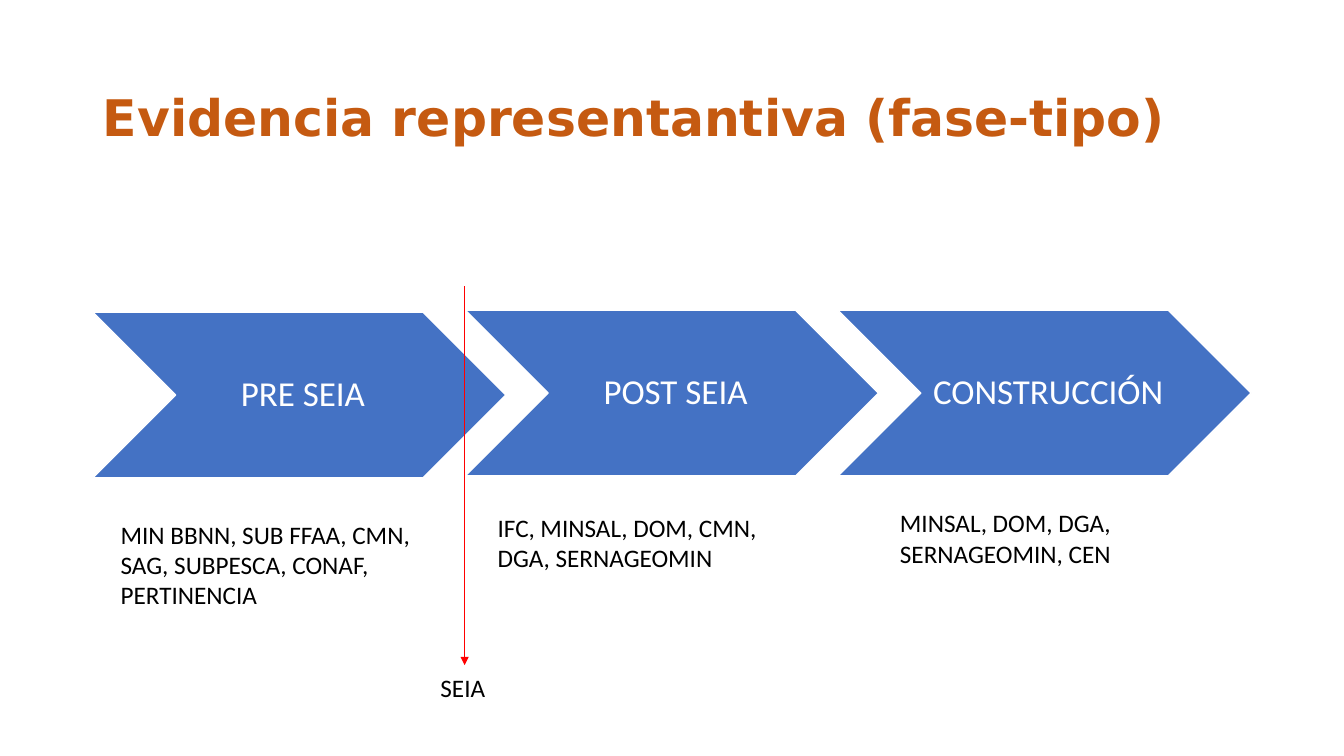
from lxml import etree
from pptx import Presentation
from pptx.dml.color import RGBColor
from pptx.enum.shapes import MSO_CONNECTOR, MSO_SHAPE
from pptx.enum.text import MSO_ANCHOR, MSO_AUTO_SIZE, PP_ALIGN
from pptx.oxml.ns import qn
from pptx.util import Cm, Pt

CHEVRON = MSO_SHAPE.CHEVRON
STRAIGHT = MSO_CONNECTOR.STRAIGHT
MIDDLE = MSO_ANCHOR.MIDDLE
LEFT, CENTER = PP_ALIGN.LEFT, PP_ALIGN.CENTER
FIXED, GROW = MSO_AUTO_SIZE.NONE, MSO_AUTO_SIZE.SHAPE_TO_FIT_TEXT


def color(code):
    return RGBColor.from_string(code)


class Deck:
    font = "Calibri"
    head = "DejaVu Sans"
    blue, orange, red = "4472C4", "C55A11", "FF0000"
    black, white = "000000", "FFFFFF"

    def __init__(self):
        self.prs = Presentation()
        self.prs.slide_width, self.prs.slide_height = Cm(33.87), Cm(19.05)
        self.slide = self.prs.slides.add_slide(self.prs.slide_layouts[5])

    def words(self, frame, text, size, ink, font=None, bold=False,
              align=LEFT, space=1.0):
        frame.word_wrap = True
        para = frame.paragraphs[0]
        para.alignment, para.line_spacing = align, space
        run = para.add_run()
        run.text = text
        run.font.name = font or self.font
        run.font.size, run.font.bold = Pt(size), bold
        run.font.color.rgb = color(ink)

    def title(self, text, *box):
        shape = self.slide.shapes.title
        shape.left, shape.top, shape.width, shape.height = map(Cm, box)
        frame = shape.text_frame
        frame.auto_size, frame.vertical_anchor = FIXED, MIDDLE
        self.words(frame, text, 36, self.orange, self.head, True, space=0.9)

    def phase(self, text, *box):
        shape = self.slide.shapes.add_shape(CHEVRON, *map(Cm, box))
        shape.shadow.inherit = False
        shape.fill.solid()
        shape.fill.fore_color.rgb = color(self.blue)
        shape.line.color.rgb = color(self.white)
        shape.line.width = Pt(1)
        frame = shape.text_frame
        frame.vertical_anchor = MIDDLE
        frame.margin_left = Cm(0.28)
        frame.margin_right = frame.margin_top = frame.margin_bottom = Cm(0.1)
        self.words(frame, text, 25, self.white, align=CENTER, space=0.9)

    def label(self, text, *box):
        frame = self.slide.shapes.add_textbox(*map(Cm, box)).text_frame
        frame.auto_size = GROW
        self.words(frame, text, 18, self.black)

    def arrow(self, *ends):
        line = self.slide.shapes.add_connector(STRAIGHT, *map(Cm, ends))
        line.line.color.rgb = color(self.red)
        line.line.width = Pt(0.5)
        props = line.element.spPr
        tip = etree.SubElement(props.find(qn("a:ln")), qn("a:tailEnd"))
        tip.set("type", "triangle")
        etree.SubElement(props, qn("a:effectLst"))


def main():
    deck = Deck()
    deck.title("Evidencia representantiva (fase-tipo)", 2.34, 1.19, 30.35, 3.68)

    # Phases, evenly stepped, each with its agencies below
    phases = [
        ("PRE SEIA", 7.87,
         "MIN BBNN, SUB FFAA, CMN, SAG, SUBPESCA, CONAF, PERTINENCIA",
         (2.79, 12.95, 8.05, 2.57)),
        ("POST SEIA", 7.82, "IFC, MINSAL, DOM, CMN, DGA, SERNAGEOMIN",
         (12.29, 12.78, 7.92, 1.8)),
        ("CONSTRUCCIÓN", 7.82, "MINSAL, DOM, DGA, SERNAGEOMIN, CEN",
         (22.43, 12.67, 7.39, 1.8)),
    ]
    for i, (name, top, staff, box) in enumerate(phases):
        deck.phase(name, 2.34 + 9.39 * i, top, 10.41, 4.17)
        deck.label(staff, *box)

    # Milestone between the first two phases
    deck.arrow(11.71, 7.21, 11.71, 16.76)
    deck.label("SEIA", 10.85, 16.81, 2.51, 1.02)

    deck.prs.save("out.pptx")


if __name__ == "__main__":
    main()
